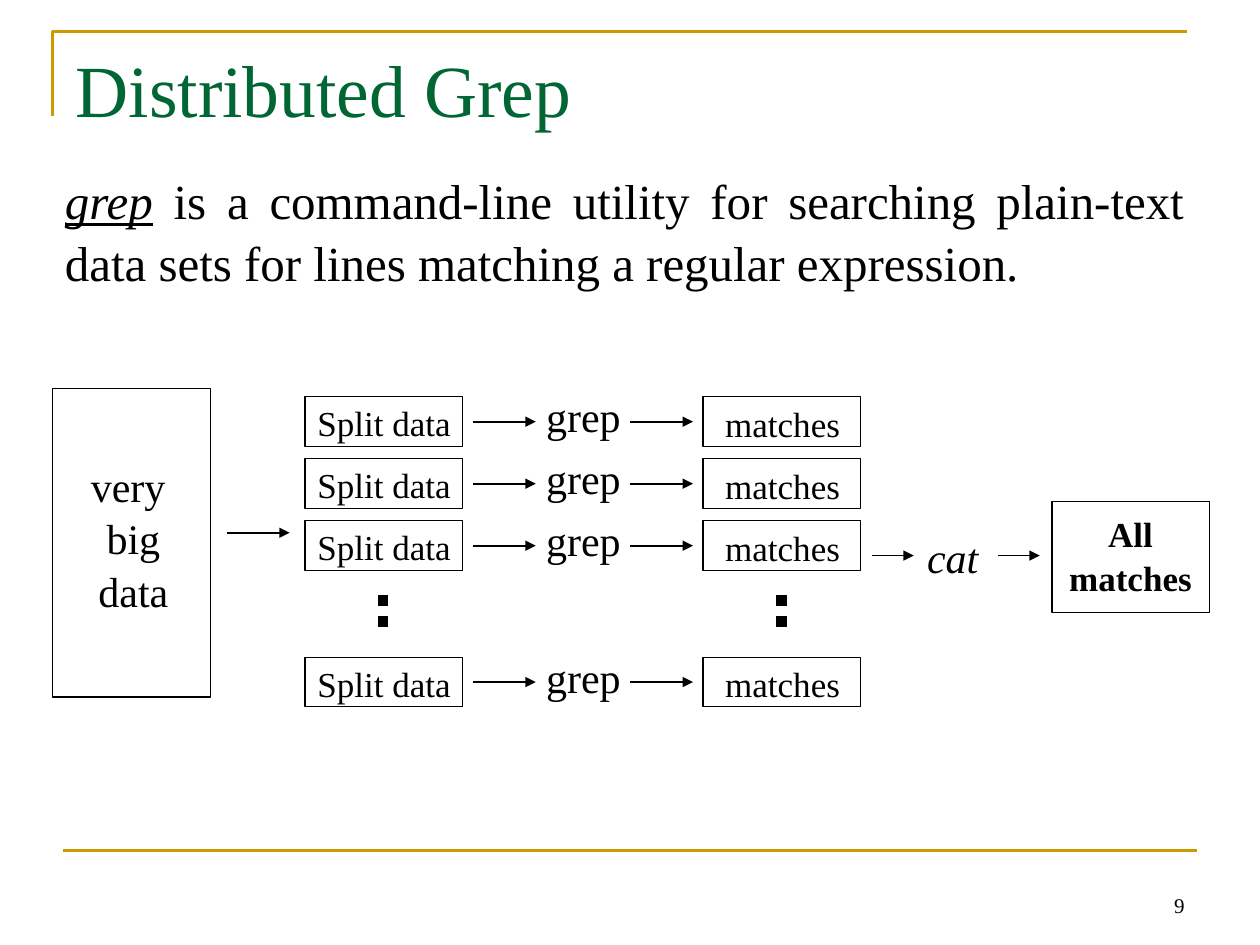
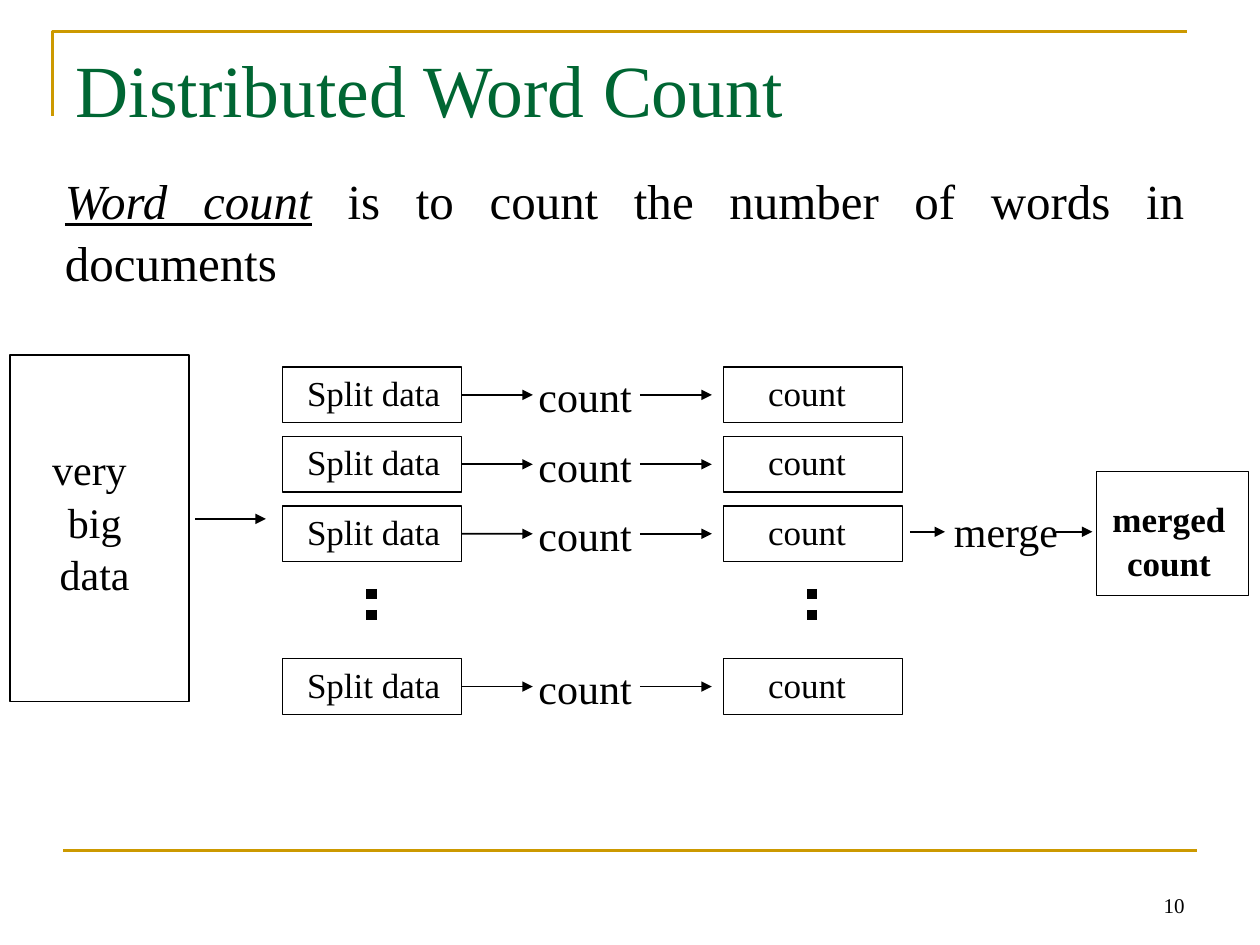
from lxml.etree import SubElement
from pptx import Presentation
from pptx.dml.color import RGBColor
from pptx.enum.dml import MSO_LINE
from pptx.enum.shapes import MSO_CONNECTOR, MSO_SHAPE
from pptx.enum.text import MSO_ANCHOR, MSO_AUTO_SIZE, PP_ALIGN
from pptx.oxml.ns import qn
from pptx.util import Cm, Pt

FONT = "Times New Roman"
BLACK, WHITE, GREEN, GOLD = "000000", "FFFFFF", "006633", "CC9900"
LEFT, CENTER, RIGHT, JUSTIFY = PP_ALIGN.LEFT, PP_ALIGN.CENTER, PP_ALIGN.RIGHT, PP_ALIGN.JUSTIFY
ROW_STEPS = (0, 1, 2, 4.2)
colour = RGBColor.from_string


def write(shape, text, size=24, color=BLACK, align=LEFT, wrap=False, spacing=1.05,
          anchor=MSO_ANCHOR.TOP, bold=False, italic=False, underline=False):
    frame = shape.text_frame
    frame.auto_size = MSO_AUTO_SIZE.NONE
    frame.word_wrap = wrap
    frame.vertical_anchor = anchor
    for index, line in enumerate(text.split("\n")):
        paragraph = frame.add_paragraph() if index else frame.paragraphs[-1]
        paragraph.alignment = align
        paragraph.line_spacing = spacing
        run = paragraph.add_run()
        run.text = line
        font = run.font
        font.name, font.size = FONT, Pt(size)
        font.bold, font.italic, font.underline = bold, italic, underline
        font.color.rgb = colour(color)


def add_line(slide, start, end, color=BLACK, width=1, arrow=True):
    points = [Cm(value) for value in (*start, *end)]
    line = slide.shapes.add_connector(MSO_CONNECTOR.STRAIGHT, *points)
    line.line.color.rgb = colour(color)
    line.line.width = Pt(width)
    if arrow:
        SubElement(line.line._get_or_add_ln(), qn("a:tailEnd"), type="triangle")
    SubElement(line._element.spPr, qn("a:effectLst"))
    return line


flows = [
    {
        "title": "Distributed Grep", "number": "9",
        "term": "grep",
        "definition": " is a command-line utility for searching plain-text data sets "
                      "for lines matching a regular expression.",
        "source": (1.06, 7.83, 3.18, 6.22), "source_text": (1.57, 9.1, 2.24, 3.33),
        "source_arrow": (4.57, 5.84, 10.74),
        "first_row": 8, "pitch": 1.25, "box": (3.18, 1),
        "columns": (6.15, 14.17),
        "labels": [("Split data", 20, 6.15, 3.23, -0.07),
                   ("grep", 24, 10.76, 2.03, -0.3),
                   ("matches", 20, 14.37, 2.84, -0.06)],
        "align": LEFT,
        "arrows": [(9.53, 10.8), (12.7, 13.97)], "joined": False,
        "dots": (7.72, 15.75), "dots_top": 12,
        "merge": "cat", "merge_italic": True, "merge_text": (18.44, 10.54, 1.55, 1.5),
        "merge_arrows": [(17.58, 18.42), (20.12, 20.96)], "merge_y": 11.2,
        "result": "All\nmatches", "result_box": (21.21, 10.11, 3.18, 2.24),
        "result_text": (21.29, 10.16, 3, 2.31),
    },
    {
        "title": "Distributed Word Count", "number": "10",
        "term": "Word count",
        "definition": " is to count the number of words in documents",
        "source": (0.2, 7.16, 3.61, 6.99), "source_text": (0.64, 8.76, 2.54, 3.33),
        "source_arrow": (3.94, 5.36, 10.46),
        "first_row": 7.4, "pitch": 1.4, "box": (3.61, 1.12),
        "columns": (5.7, 14.58),
        "labels": [("Split data", 20, 5.92, 3.23, -0.08),
                   ("count", 24, 10.59, 2.41, -0.1),
                   ("count", 20, 15.23, 2.08, -0.08)],
        "align": CENTER,
        "arrows": [(9.31, 10.74), (12.9, 14.35)], "joined": True,
        "dots": (7.49, 16.37), "dots_top": 11.87,
        "merge": "merge", "merge_italic": False, "merge_text": (18.97, 10.01, 2.62, 1.27),
        "merge_arrows": [(18.34, 19.05), (21.29, 22.02)], "merge_y": 10.72,
        "result": "merged\ncount", "result_box": (22.1, 9.5, 3.07, 2.51),
        "result_text": (22.17, 9.86, 2.79, 1.96),
    },
]

presentation = Presentation()
presentation.slide_width, presentation.slide_height = Cm(25.4), Cm(19.05)
layout = presentation.slide_layouts[5]

for flow in flows:
    slide = presentation.slides.add_slide(layout)
    shapes = slide.shapes

    if flow is flows[0]:
        outline = shapes.build_freeform(Cm(1.06), Cm(2.33))
        outline.add_line_segments([(Cm(1.06), Cm(0.63)), (Cm(23.92), Cm(0.63))], close=False)
        corner = outline.convert_to_shape()
        corner.shadow.inherit = False
        corner.fill.background()
        corner.line.color.rgb = colour(GOLD)
        corner.line.width = Pt(1.5)
        footer_line = add_line(slide, (1.27, 17.15), (24.13, 17.15), GOLD, 1.5, arrow=False)
        for shape in (corner, footer_line):
            layout.shapes.element.append(shape._element)

    title = shapes.title
    title.left, title.top, title.width, title.height = Cm(1.27), Cm(0.76), Cm(22.86), Cm(3.18)
    write(title, flow["title"], size=42, color=GREEN, wrap=True, spacing=1)

    rows = [flow["first_row"] + step * flow["pitch"] for step in ROW_STEPS]
    box_width, box_height = flow["box"]
    boxes = [flow["source"], flow["result_box"]]
    boxes += [(x, y, box_width, box_height) for x in flow["columns"] for y in rows]
    rectangles = []
    for box in boxes:
        rectangle = shapes.add_shape(MSO_SHAPE.RECTANGLE, *map(Cm, box))
        rectangle.shadow.inherit = False
        rectangle.fill.solid()
        rectangle.fill.fore_color.rgb = colour(WHITE)
        rectangle.line.color.rgb = colour(BLACK)
        rectangle.line.width = Pt(0.75)
        rectangles.append(rectangle)
    split_boxes = rectangles[2:6]

    texts = [
        (flow["source_text"], "very \nbig\ndata", {"align": CENTER}),
        (flow["merge_text"], flow["merge"],
         {"align": flow["align"], "italic": flow["merge_italic"]}),
        (flow["result_text"], flow["result"], {"size": 20, "bold": True, "align": CENTER}),
        ((18.21, 17.35, 5.92, 1.27), flow["number"],
         {"size": 12, "align": RIGHT, "anchor": MSO_ANCHOR.BOTTOM, "wrap": True}),
    ]
    for label, size, x, width, shift in flow["labels"]:
        texts += [((x, y + shift, width, size * 0.055), label,
                   {"size": size, "align": flow["align"]}) for y in rows]
    for box, text, style in texts:
        write(shapes.add_textbox(*map(Cm, box)), text, **style)

    intro = shapes.add_textbox(Cm(1.06), Cm(3.25), Cm(23.07), Cm(2.64))
    write(intro, flow["term"], size=28, align=JUSTIFY, wrap=True, italic=True, underline=True)
    write(intro, flow["definition"], size=28, align=JUSTIFY, wrap=True)

    start, end, y = flow["source_arrow"]
    add_line(slide, (start, y), (end, y))
    for start, end in flow["merge_arrows"]:
        add_line(slide, (start, flow["merge_y"]), (end, flow["merge_y"]))
    for column, (start, end) in enumerate(flow["arrows"]):
        for row_top, split_box in zip(rows, split_boxes):
            middle = row_top + box_height / 2
            arrow = add_line(slide, (start, middle), (end, middle))
            if flow["joined"] and column == 0:
                arrow.begin_connect(split_box, 3)
    for x in flow["dots"]:
        top = flow["dots_top"]
        dots = add_line(slide, (x, top), (x, top + 0.8), width=6, arrow=False)
        dots.line.dash_style = MSO_LINE.ROUND_DOT

presentation.save("out.pptx")
